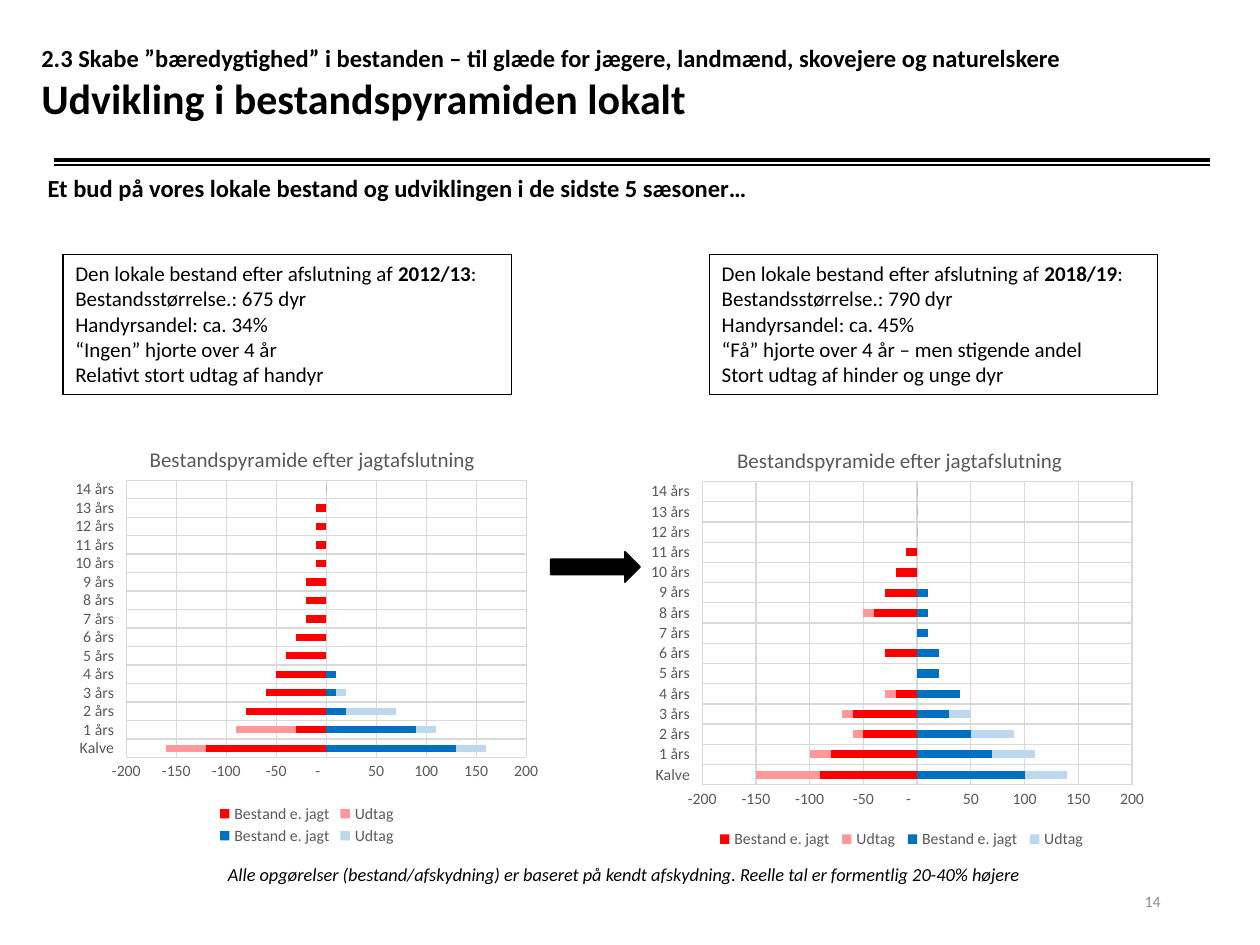
"""Build a slide comparing two local population pyramids."""
from dataclasses import dataclass
from typing import Optional

from lxml import etree
from pptx import Presentation, util as u
from pptx.chart.data import CategoryChartData
from pptx.dml.color import RGBColor
from pptx.enum import chart as ch, shapes, text
from pptx.oxml import parse_xml
from pptx.oxml.ns import nsdecls, qn

COLORS = {"black": "000000", "gray": "595959", "number": "8C8C8C", "grid": "D9D9D9",
          "males": "FF0000", "males_taken": "FF9999",
          "females": "0070C0", "females_taken": "BDD7EE"}
FONT = "Calibri"
COLS, ROWS = 100, 75
SERIES = [("Bestand e. jagt", "males"), ("Udtag", "males_taken"),
          ("Bestand e. jagt", "females"), ("Udtag", "females_taken")]
AGES = ["Kalve"] + [f"{age} års" for age in range(1, 15)]
NUMBER_FORMAT = '_ * #,##0_ ;_ * \\-#,##0_ ;_ * "-"??_ ;_ '

prs = Presentation()
prs.slide_width, prs.slide_height = u.Inches(10), u.Inches(7.5)
s = prs.slides.add_slide(prs.slide_layouts[6])


@dataclass
class Box:
    """A rectangle in grid columns and rows."""
    col: float
    row: float
    cols: float
    rows: float

    def emu(self) -> tuple:
        return x(self.col), y(self.row), x(self.cols), y(self.rows)


@dataclass
class Span:
    """A piece of text with one format."""
    text: str
    size: float = 12
    bold: bool = False
    italic: bool = False
    color: str = "black"


@dataclass
class Season:
    """One season's facts and pyramid, with layouts as shares of the chart."""
    name: str
    facts: list
    facts_box: Box
    chart_box: Box
    values: list
    title: tuple
    plot: tuple
    legend: tuple


def x(cols: float) -> int:
    return round(prs.slide_width * cols / COLS)


def y(rows: float) -> int:
    return round(prs.slide_height * rows / ROWS)


def rgb(name: str) -> RGBColor:
    return RGBColor.from_string(COLORS[name])


def set_font(font, size: float, color: str, bold: bool = False, italic: bool = False) -> None:
    font.name, font.size, font.bold, font.italic = FONT, u.Pt(size), bold, italic
    font.color.rgb = rgb(color)


def set_line(line, color: str, width: float) -> None:
    line.color.rgb = rgb(color)
    line.width = u.Pt(width)


def write(p, spans: list) -> None:
    for span in spans:
        if span.text == "\v":
            p.add_line_break()
            continue
        r = p.add_run()
        r.text = span.text
        set_font(r.font, span.size, span.color, span.bold, span.italic)


def add_text(box: Box, spans: list, anchor=text.MSO_ANCHOR.MIDDLE,
             align=text.PP_ALIGN.LEFT, spacing: Optional[float] = None) -> None:
    tf = s.shapes.add_textbox(*box.emu()).text_frame
    tf.word_wrap, tf.vertical_anchor = True, anchor
    p = tf.paragraphs[0]
    p.alignment, p.line_spacing = align, spacing
    write(p, spans)


def add_rule(row: float, width: float) -> None:
    line = s.shapes.add_connector(shapes.MSO_CONNECTOR.STRAIGHT, x(4.3), y(row), x(96), y(row))
    set_line(line.line, "black", width)
    etree.SubElement(line._element.spPr, qn("a:effectLst"))


def add_facts(season: Season) -> None:
    sp = s.shapes.add_shape(shapes.MSO_SHAPE.RECTANGLE, *season.facts_box.emu())
    sp.shadow.inherit = False
    sp.fill.background()
    set_line(sp.line, "black", 0.75)
    tf = sp.text_frame
    tf.word_wrap, tf.vertical_anchor = True, text.MSO_ANCHOR.TOP
    tf.auto_size = text.MSO_AUTO_SIZE.SHAPE_TO_FIT_TEXT
    heading = [Span("Den lokale bestand efter afslutning af "),
               Span(season.name, bold=True), Span(":")]
    for i, spans in enumerate([heading] + [[Span(fact)] for fact in season.facts]):
        p = tf.add_paragraph() if i else tf.paragraphs[0]
        p.alignment = text.PP_ALIGN.LEFT
        write(p, spans)


def place(part, index: int, shares: tuple, inner: bool = False) -> None:
    """Give a chart part a manual layout."""
    for old in part.findall(qn("c:layout")):
        part.remove(old)
    target = '<c:layoutTarget val="inner"/>' if inner else ""
    modes = '<c:xMode val="edge"/><c:yMode val="edge"/>'
    sizes = "".join(f'<c:{key} val="{share}"/>' for key, share in zip("xywh", shares))
    part.insert(index, parse_xml(f'<c:layout {nsdecls("c")}><c:manualLayout>'
                                 f'{target}{modes}{sizes}</c:manualLayout></c:layout>'))


def add_pyramid(season: Season) -> None:
    data = CategoryChartData()
    data.categories = AGES
    for (name, _), values in zip(SERIES, season.values):
        data.add_series(name, values + [0] * (len(AGES) - len(values)))
    chart = s.shapes.add_chart(ch.XL_CHART_TYPE.BAR_STACKED, *season.chart_box.emu(), data).chart
    set_font(chart.font, 10, "black")
    tf = chart.chart_title.text_frame
    write(tf.paragraphs[0], [Span("Bestandspyramide efter jagtafslutning", color="gray")])
    chart.has_legend = True
    chart.legend.position = ch.XL_LEGEND_POSITION.BOTTOM
    chart.legend.include_in_layout = False
    set_font(chart.legend.font, 9, "gray")
    plot = chart.plots[0]
    plot.gap_width, plot.overlap, plot.vary_by_categories = 150, 100, False
    for series, (_, color) in zip(plot.series, SERIES):
        series.invert_if_negative = False
        series.format.fill.solid()
        series.format.fill.fore_color.rgb = rgb(color)
    for axis in (chart.category_axis, chart.value_axis):
        axis.major_tick_mark = axis.minor_tick_mark = ch.XL_TICK_MARK.NONE
        axis.has_major_gridlines = True
        set_line(axis.major_gridlines.format.line, "grid", 0.75)
        set_font(axis.tick_labels.font, 9, "gray")
    chart.category_axis.tick_label_position = ch.XL_TICK_LABEL_POSITION.LOW
    set_line(chart.category_axis.format.line, "grid", 0.75)
    axis = chart.value_axis
    axis.minimum_scale, axis.maximum_scale, axis.major_unit = -200, 200, 50
    axis.format.line.fill.background()
    axis.tick_labels.number_format = NUMBER_FORMAT
    axis.tick_labels.number_format_is_linked = False
    root = chart._chartSpace.find(qn("c:chart"))
    place(root.find(qn("c:title")), 1, season.title)
    place(root.find(qn("c:plotArea")), 0, season.plot, inner=True)
    place(root.find(qn("c:legend")), 1, season.legend)


SEASONS = [
    Season("2012/13",
           ["Bestandsstørrelse.: 675 dyr", "Handyrsandel: ca. 34%",
            "“Ingen” hjorte over 4 år", "Relativt stort udtag af handyr"],
           Box(5, 20.2, 35.6, 11.1), Box(5, 33.3, 38.7, 34.4),
           [[-120, -30, -80, -60, -50, -40, -30, -20, -20, -20, -10, -10, -10, -10],
            [-40, -60], [130, 90, 20, 10, 10], [30, 20, 50, 10]],
           (0.17, 0.05), (0.13, 0.14, 0.82, 0.64), (0.31, 0.88, 0.38, 0.11)),
    Season("2018/19",
           ["Bestandsstørrelse.: 790 dyr", "Handyrsandel: ca. 45%",
            "“Få” hjorte over 4 år – men stigende andel", "Stort udtag af hinder og unge dyr"],
           Box(56.3, 20.2, 35.6, 11.1), Box(50.8, 33.4, 41.1, 34.4),
           [[-90, -80, -50, -60, -20, 0, -30, 0, -40, -30, -20, -10],
            [-60, -20, -10, -10, -10, 0, 0, 0, -10],
            [100, 70, 50, 30, 40, 20, 20, 10, 10, 10], [40, 40, 40, 20]],
           (0.18, 0.05), (0.12, 0.14, 0.83, 0.7), (0.14, 0.93, 0.73, 0.07)),
]

add_rule(13.1, 1)
add_rule(12.7, 2)
add_text(Box(2.3, 0.7, 90, 11.7), [
    Span("2.3 Skabe ”bæredygtighed” i bestanden – til glæde for jægere, landmænd, "
         "skovejere og naturelskere", 14, bold=True),
    Span("\v"), Span("Udvikling i bestandspyramiden lokalt", 24, bold=True)])
add_text(Box(2.8, 13.5, 90, 3.5),
         [Span("Et bud på vores lokale bestand og udviklingen i de sidste 5 sæsoner…", 14, bold=True)],
         anchor=text.MSO_ANCHOR.TOP, spacing=0.9)
add_text(Box(17.1, 67.4, 66.5, 4),
         [Span("Alle opgørelser (bestand/afskydning) er baseret på kendt afskydning. "
               "Reelle tal er formentlig 20-40% højere", 10.5, italic=True)])
add_text(Box(70.6, 69.5, 22.5, 4), [Span("14", 9, color="number")], align=text.PP_ALIGN.RIGHT)
for season in SEASONS:
    add_pyramid(season)
    add_facts(season)
arrow = s.shapes.add_shape(shapes.MSO_SHAPE.RIGHT_ARROW, *Box(43.7, 43.8, 7.1, 2.4).emu())
arrow.shadow.inherit = False
arrow.fill.solid()
arrow.fill.fore_color.rgb = rgb("black")
set_line(arrow.line, "black", 1)
prs.save("out.pptx")
